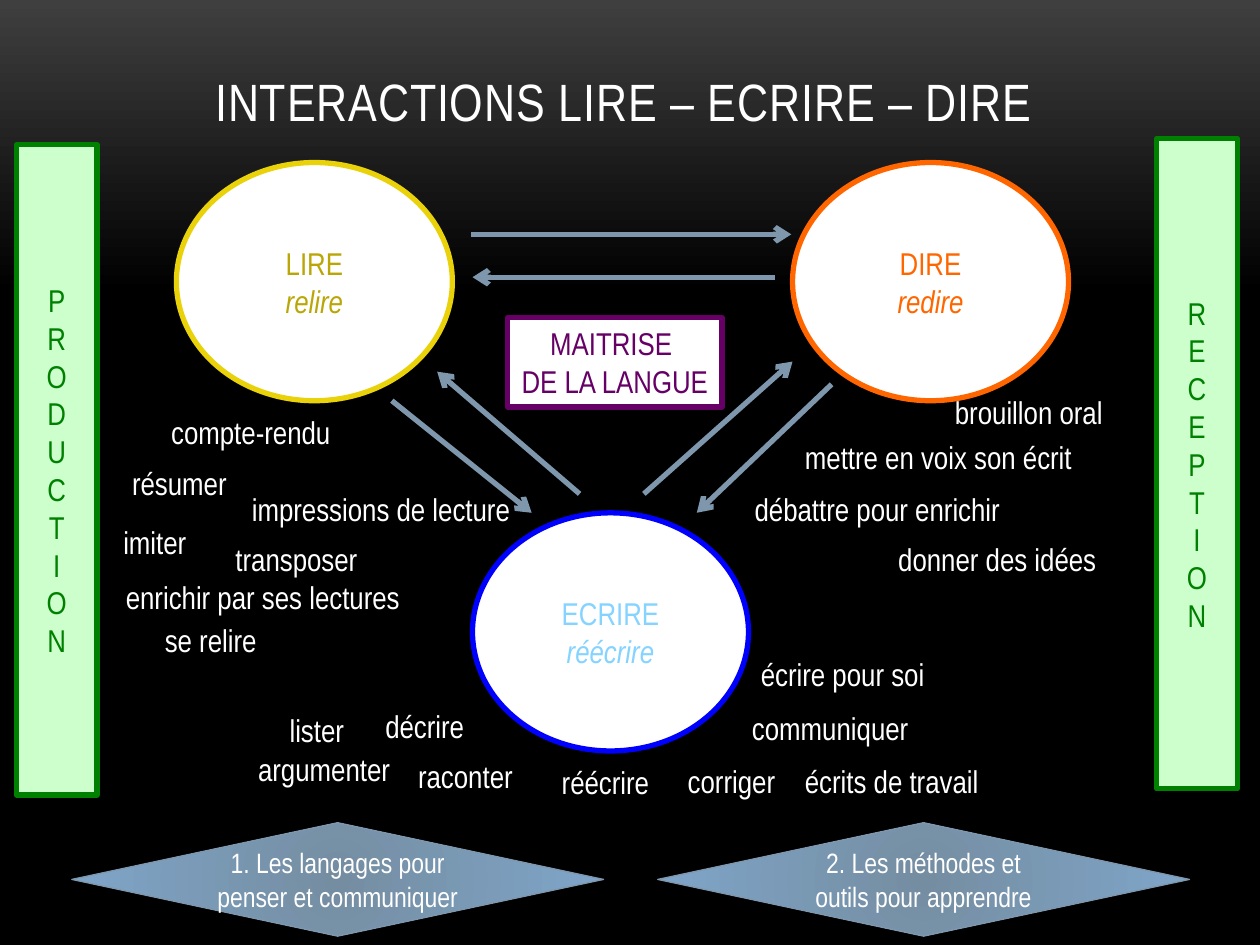
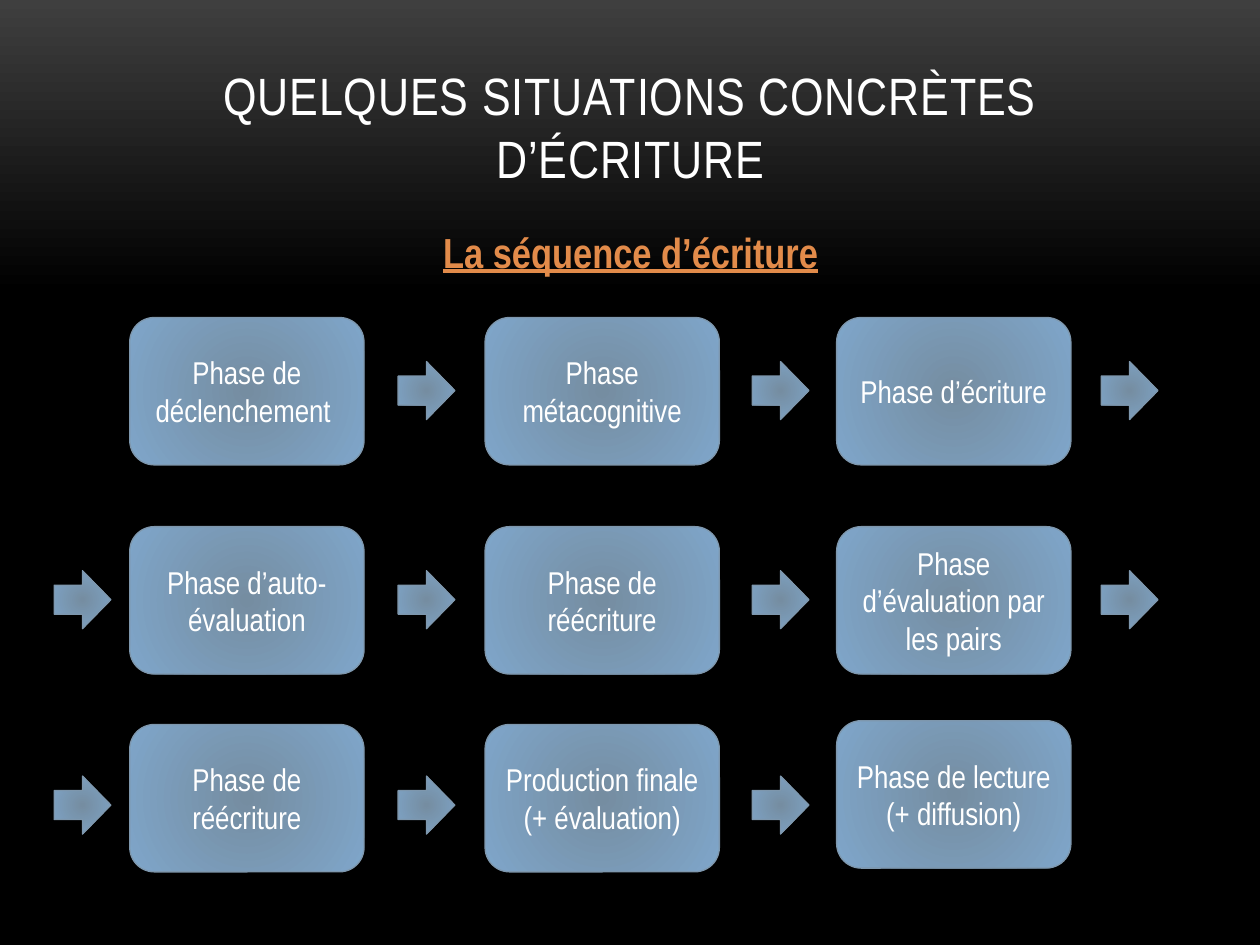
from dataclasses import dataclass
from typing import Any

import lxml.etree
import pptx
import pptx.dml.color
import pptx.enum.shapes
import pptx.enum.text
import pptx.oxml.ns
import pptx.util

Inches = pptx.util.Inches
Kind = pptx.enum.shapes.MSO_SHAPE
Align = pptx.enum.text.PP_ALIGN
Anchor = pptx.enum.text.MSO_ANCHOR
Fit = pptx.enum.text.MSO_AUTO_SIZE
qn = pptx.oxml.ns.qn


@dataclass(frozen=True)
class Theme:
    font: str = "Arial Narrow"
    head: int = 30
    sub: int = 24
    text: int = 18
    note: int = 16
    bold: float = 3
    thin: float = 0.75
    white: str = "FFFFFF"
    black: str = "000000"
    smoke: str = "3F3F3F"
    steel: str = "7E97AD"
    core: str = "758DA1"
    rim: str = "7FA6CA"
    gold: str = "EAD20A"
    olive: str = "BAA606"
    orange: str = "FF6600"
    blue: str = "0000FF"
    sky: str = "85D3FF"
    plum: str = "660066"
    green: str = "008000"
    mint: str = "CCFFCC"
    amber: str = "E28B4A"


THEME = Theme()


@dataclass(frozen=True)
class Box:
    left: float
    top: float
    width: float
    height: float

    def place(self) -> tuple:
        return tuple(map(Inches, (self.left, self.top, self.width, self.height)))


@dataclass(frozen=True)
class Skill:
    left: float
    top: float
    name: str
    again: str
    edge: str
    ink: str


@dataclass(frozen=True)
class Arrow:
    start: tuple[float, float]
    end: tuple[float, float]


@dataclass(frozen=True)
class Word:
    left: float
    top: float
    width: float
    text: str


@dataclass(frozen=True)
class Pillar:
    left: float
    top: float
    word: str


@dataclass(frozen=True)
class Step:
    lines: tuple[str, ...]
    lift: float = 0


@dataclass(frozen=True)
class Row:
    top: float
    drop: float
    steps: tuple[Step, ...]


SKILLS = (
    Skill(1.4, 1.29, "LIRE", "relire", THEME.gold, THEME.olive),
    Skill(6.29, 1.29, "DIRE", "redire", THEME.orange, THEME.orange),
    Skill(3.75, 4.07, "ECRIRE", "réécrire", THEME.blue, THEME.sky),
)
ARROWS = (
    Arrow((3.11, 3.18), (4.22, 4.07)),
    Arrow((6.6, 3.05), (5.53, 4.07)),
    Arrow((4.6, 3.92), (3.47, 2.95)),
    Arrow((5.11, 3.92), (6.29, 2.87)),
    Arrow((3.74, 1.86), (6.28, 1.86)),
    Arrow((6.15, 2.2), (3.75, 2.2)),
)
PILLARS = (Pillar(0.13, 1.15, "PRODUCTION"), Pillar(9.18, 1.1, "RECEPTION"))
WORDS = (
    Word(1.26, 3.23, 1.48, "compte-rendu"),
    Word(0.95, 3.63, 0.96, "résumer"),
    Word(1.9, 3.84, 2.28, "impressions de lecture"),
    Word(0.88, 4.1, 0.71, "imiter"),
    Word(0.9, 4.54, 2.42, "enrichir par ses lectures"),
    Word(5.87, 5.58, 1.46, "communiquer"),
    Word(1.21, 4.88, 0.97, "se relire"),
    Word(4.36, 6.01, 0.9, "réécrire"),
    Word(5.94, 5.15, 1.54, "écrire pour soi"),
    Word(7.48, 3.07, 1.41, "brouillon oral"),
    Word(6.29, 3.43, 2.34, "mettre en voix son écrit"),
    Word(5.89, 3.84, 2.21, "débattre pour enrichir"),
    Word(3.22, 5.96, 0.96, "raconter"),
    Word(2.96, 5.56, 0.83, "décrire"),
    Word(1.95, 5.9, 1.27, "argumenter"),
    Word(1.77, 4.24, 1.18, "transposer"),
    Word(5.36, 6, 0.9, "corriger"),
    Word(6.29, 6, 1.64, "écrits de travail"),
    Word(7.03, 4.24, 1.82, "donner des idées"),
    Word(2.2, 5.59, 0.64, "lister"),
)
GOALS = (
    (0.57, "1. Les langages pour penser et communiquer"),
    (5.22, "2. Les méthodes et outils pour apprendre"),
)
ROWS = (
    Row(2.52, 0.35, (
        Step(("Phase de déclenchement ",)),
        Step(("Phase métacognitive",)),
        Step(("Phase d’écriture",)),
    )),
    Row(4.18, 0.35, (
        Step(("Phase d’auto-évaluation",)),
        Step(("Phase de réécriture",)),
        Step(("Phase d’évaluation par les pairs",)),
    )),
    Row(5.75, 0.41, (
        Step(("Phase de réécriture",)),
        Step(("Production finale", "(+ évaluation)")),
        Step(("Phase de lecture (+ diffusion)",), 0.03),
    )),
)
LEFTS = (1.03, 3.85, 6.64)
GAPS = (0.43, 3.16, 5.97, 8.74)


def shade(code: str) -> Any:
    return pptx.dml.color.RGBColor.from_string(code)


def style(thing: Any, form: dict) -> None:
    for key, value in form.items():
        setattr(thing, key, value)


def blend(fill: Any, first: str, last: str, stop: float = 1) -> None:
    fill.gradient()
    for mark, code, spot in zip(fill.gradient_stops, (first, last), (0, stop)):
        mark.color.rgb = shade(code)
        mark.position = spot


def glow(shape: Any) -> None:
    blend(shape.fill, THEME.core, THEME.rim)
    grad = shape.fill._xPr.find(qn("a:gradFill"))
    grad.remove(grad.find(qn("a:lin")))
    ring = lxml.etree.SubElement(grad, qn("a:path"), {"path": "circle"})
    sides = dict.fromkeys("ltrb", "100000")
    lxml.etree.SubElement(ring, qn("a:fillToRect"), sides)


def write(frame: Any, lines: tuple[str, ...], ink: str, size: int, align: Any = Align.CENTER) -> None:
    for spot, line in enumerate(lines):
        para = frame.add_paragraph() if spot else frame.paragraphs[0]
        para.alignment = align
        for part, text in enumerate(line.split("\n")):
            if part:
                para.add_line_break()
            run = para.add_run()
            run.text = text
            style(run.font, {"name": THEME.font, "size": pptx.util.Pt(size)})
            run.font.color.rgb = shade(ink)


def label(slide: Any, box: Box, text: str, ink: str, size: int, align: Any, form: dict) -> Any:
    frame = slide.shapes.add_textbox(*box.place()).text_frame
    style(frame, form)
    write(frame, (text,), ink, size, align)
    return frame.paragraphs[0].runs[0].font


def draw(slide: Any, kind: Any, box: Box, edge: str, width: float, fill: str = "") -> Any:
    shape = slide.shapes.add_shape(kind, *box.place())
    shape.shadow.inherit = False
    shape.line.color.rgb = shade(edge)
    shape.line.width = pptx.util.Pt(width)
    if fill:
        shape.fill.solid()
        shape.fill.fore_color.rgb = shade(fill)
    else:
        glow(shape)
    slim = Inches(0.05)
    style(shape.text_frame, {
        "word_wrap": True, "vertical_anchor": Anchor.MIDDLE,
        "margin_left": slim, "margin_right": slim,
    })
    return shape


def link(slide: Any, arrow: Arrow) -> None:
    ends = map(Inches, arrow.start + arrow.end)
    line = slide.shapes.add_connector(pptx.enum.shapes.MSO_CONNECTOR.STRAIGHT, *ends)
    line.line.color.rgb = shade(THEME.steel)
    line.line.width = pptx.util.Pt(THEME.bold)
    lxml.etree.SubElement(line.line._get_or_add_ln(), qn("a:tailEnd"), {"type": "arrow"})
    lxml.etree.SubElement(line._element.spPr, qn("a:effectLst"))


def start(deck: Any, title: str, height: float) -> Any:
    slide = deck.slides.add_slide(deck.slide_layouts[6])
    back = slide.background.fill
    blend(back, THEME.smoke, THEME.black, 0.31)
    back.gradient_angle = 270
    form = {"word_wrap": True, "vertical_anchor": Anchor.BOTTOM}
    font = label(slide, Box(0.67, 0.3, 8.67, height), title, THEME.white, THEME.head, Align.CENTER, form)
    font._element.set("spc", "50")
    return slide


def skills(deck: Any) -> None:
    slide = start(deck, "INTERACTIONS LIRE – ECRIRE – DIRE ", 0.8)
    for skill in SKILLS:
        box = Box(skill.left, skill.top, 2.19, 1.89)
        frame = draw(slide, Kind.OVAL, box, skill.edge, THEME.bold, THEME.white).text_frame
        write(frame, (skill.name, skill.again), skill.ink, THEME.text)
        frame.paragraphs[1].runs[0].font.italic = True
    for arrow in ARROWS:
        link(slide, arrow)
    hub = draw(slide, Kind.RECTANGLE, Box(4.03, 2.52, 1.7, 0.71), THEME.plum, THEME.bold, THEME.white)
    hub.text_frame.word_wrap = False
    write(hub.text_frame, ("MAITRISE \nDE LA LANGUE",), THEME.plum, THEME.text)
    for post in PILLARS:
        box = Box(post.left, post.top, 0.64, 5.16)
        shape = draw(slide, Kind.RECTANGLE, box, THEME.green, THEME.bold, THEME.mint)
        write(shape.text_frame, ("\n".join(post.word),), THEME.green, THEME.text)
    form = {"word_wrap": False, "auto_size": Fit.SHAPE_TO_FIT_TEXT}
    for word in WORDS:
        box = Box(word.left, word.top, word.width, 0.4)
        label(slide, box, word.text, THEME.white, THEME.text, Align.LEFT, form)
    for left, text in GOALS:
        shape = draw(slide, Kind.DIAMOND, Box(left, 6.53, 4.22, 0.9), THEME.steel, THEME.thin)
        write(shape.text_frame, (text,), THEME.white, THEME.note)


def phases(deck: Any) -> None:
    slide = start(deck, "QUELQUES SITUATIONS CONCRÈTES D’ÉCRITURE", 1.25)
    box = Box(0.67, 1.75, 8.67, 4.5)
    font = label(slide, box, "La séquence d’écriture", THEME.amber, THEME.sub, Align.CENTER, {"word_wrap": True})
    style(font, {"bold": True, "underline": True})
    for rank, row in enumerate(ROWS):
        for left, step in zip(LEFTS, row.steps):
            box = Box(left, row.top - step.lift, 1.86, 1.17)
            shape = draw(slide, Kind.ROUNDED_RECTANGLE, box, THEME.steel, THEME.thin)
            write(shape.text_frame, step.lines, THEME.white, THEME.text)
        first = 1 if rank == 0 else 0
        last = len(GAPS) - (rank == len(ROWS) - 1)
        for left in GAPS[first:last]:
            box = Box(left, row.top + row.drop, 0.45, 0.46)
            draw(slide, Kind.RIGHT_ARROW, box, THEME.steel, THEME.thin)


def main() -> None:
    deck = pptx.Presentation()
    style(deck, {"slide_width": Inches(10), "slide_height": Inches(7.5)})
    skills(deck)
    phases(deck)
    deck.save("out.pptx")


if __name__ == "__main__":
    main()
